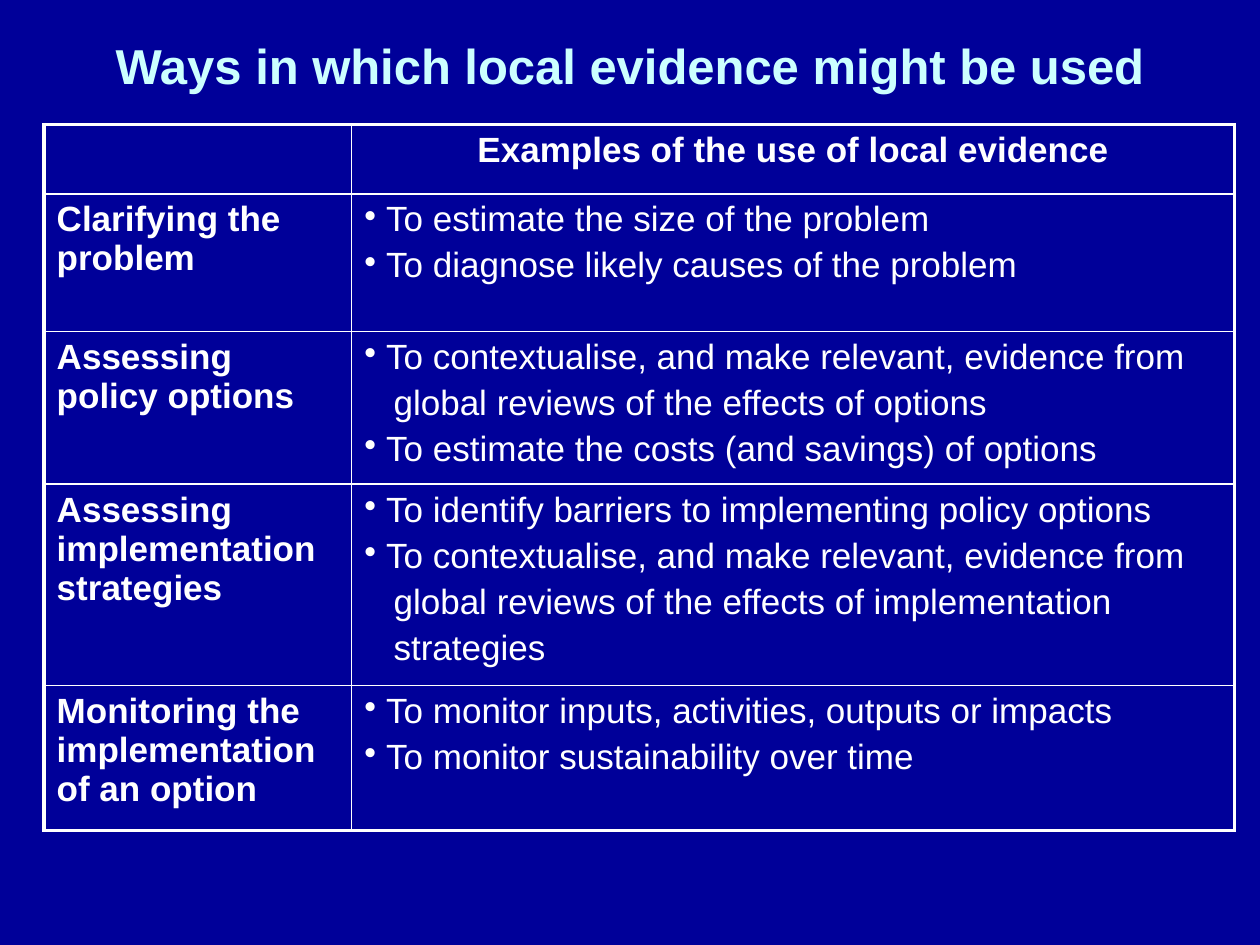
"""Build a slide with a table of ways to use local evidence."""
from lxml import etree
from pptx import Presentation
from pptx import util as u
from pptx.dml.color import RGBColor
from pptx.enum import text
from pptx.oxml import ns

COLORS = {"background": "000099", "title": "CCFFFF", "body": "FFFFFF"}
FONT = "Arial"
COLUMN_WIDTHS = [6.2, 17.8]
ROW_HEIGHTS = [1.4, 2.77, 2.92, 3.83, 2.92]
BULLET_INDENT = 0.44
CONTINUATION_INDENT = 0.59
ROWS = [
    ("Clarifying the problem", [
        ["To estimate the size of the problem"],
        ["To diagnose likely causes of the problem"],
    ]),
    ("Assessing policy options", [
        ["To contextualise, and make relevant, evidence from",
         "global reviews of the effects of options"],
        ["To estimate the costs (and savings) of options"],
    ]),
    ("Assessing implementation strategies", [
        ["To identify barriers to implementing policy options"],
        ["To contextualise, and make relevant, evidence from",
         "global reviews of the effects of implementation",
         "strategies"],
    ]),
    ("Monitoring the implementation of an option", [
        ["To monitor inputs, activities, outputs or impacts"],
        ["To monitor sustainability over time"],
    ]),
]


def write(paragraph, words, size, color, bold):
    paragraph.text = words
    font = paragraph.runs[0].font
    font.name = FONT
    font.size = u.Pt(size)
    font.bold = bold
    font.color.rgb = RGBColor.from_string(COLORS[color])


def add_border(cell, side, width):
    properties = cell._tc.get_or_add_tcPr()
    line = etree.SubElement(properties, ns.qn(f"a:ln{side}"), w=str(u.Pt(width)))
    fill = etree.SubElement(line, ns.qn("a:solidFill"))
    etree.SubElement(fill, ns.qn("a:srgbClr"), val=COLORS["body"])


presentation = Presentation()
presentation.slide_width = u.Cm(25.4)
presentation.slide_height = u.Cm(19.05)
slide = presentation.slides.add_slide(presentation.slide_layouts[6])
slide.background.fill.solid()
slide.background.fill.fore_color.rgb = RGBColor.from_string(COLORS["background"])

title = slide.shapes.add_textbox(u.Cm(1.27), u.Cm(0.33), u.Cm(22.86), u.Cm(1.96))
title.text_frame.word_wrap = True
title.text_frame.vertical_anchor = text.MSO_ANCHOR.MIDDLE
heading = title.text_frame.paragraphs[0]
write(heading, "Ways in which local evidence might be used", 28, "title", True)
heading.alignment = text.PP_ALIGN.CENTER

table = slide.shapes.add_table(
    len(ROW_HEIGHTS), len(COLUMN_WIDTHS), u.Cm(0.89), u.Cm(2.51),
    u.Cm(sum(COLUMN_WIDTHS)), u.Cm(sum(ROW_HEIGHTS))).table
table.first_row = False
table.horz_banding = False
for column, width in zip(table.columns, COLUMN_WIDTHS):
    column.width = u.Cm(width)
for row, height in zip(table.rows, ROW_HEIGHTS):
    row.height = u.Cm(height)

last_row = len(ROW_HEIGHTS) - 1
last_column = len(COLUMN_WIDTHS) - 1
for row_index, row in enumerate(table.rows):
    for column_index, cell in enumerate(row.cells):
        outer_sides = {
            "L": column_index == 0,
            "R": column_index == last_column,
            "T": row_index == 0,
            "B": row_index == last_row,
        }
        for side, outer in outer_sides.items():
            add_border(cell, side, 2.25 if outer else 1)
        cell.fill.background()

header = table.cell(0, 1).text_frame.paragraphs[0]
write(header, "Examples of the use of local evidence", 20, "body", True)
header.alignment = text.PP_ALIGN.CENTER

for row_index, (purpose, examples) in enumerate(ROWS, start=1):
    write(table.cell(row_index, 0).text_frame.paragraphs[0], purpose, 20, "body", True)
    frame = table.cell(row_index, 1).text_frame
    lines = [(words, position == 0) for example in examples
             for position, words in enumerate(example)]
    for line_index, (words, bulleted) in enumerate(lines):
        paragraph = frame.add_paragraph() if line_index else frame.paragraphs[0]
        properties = paragraph._p.get_or_add_pPr()
        indent = BULLET_INDENT if bulleted else CONTINUATION_INDENT
        properties.set("marL", str(u.Cm(indent)))
        properties.set("indent", str(-u.Cm(indent) if bulleted else 0))
        if bulleted:
            etree.SubElement(properties, ns.qn("a:buChar"), char="•")
        else:
            etree.SubElement(properties, ns.qn("a:buNone"))
        if line_index:
            paragraph.space_before = u.Pt(4)
        write(paragraph, words, 20, "body", False)

presentation.save("out.pptx")
